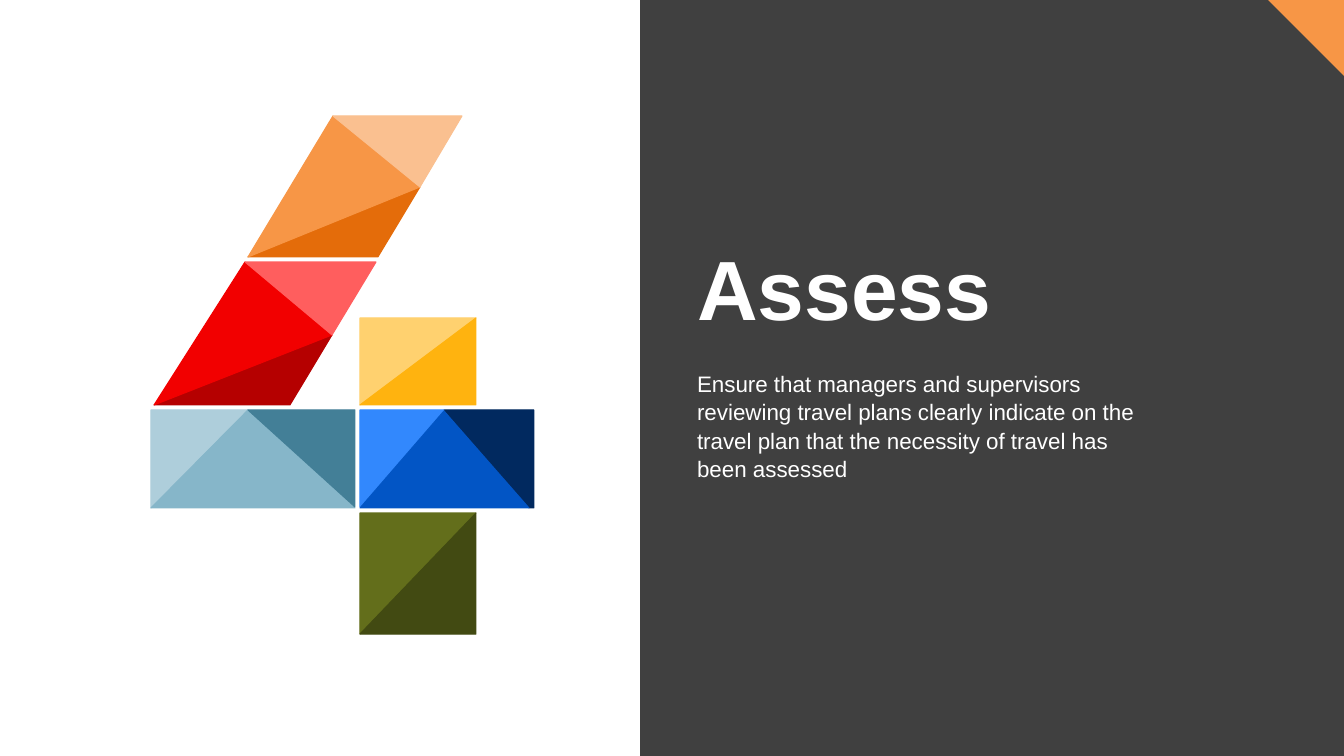
from pptx import Presentation
from pptx.dml.color import RGBColor
from pptx.enum.shapes import MSO_SHAPE
from pptx.enum.text import MSO_ANCHOR, MSO_AUTO_SIZE, PP_ALIGN
from pptx.util import Pt

RECTANGLE = MSO_SHAPE.RECTANGLE
TOP, BOTTOM = MSO_ANCHOR.TOP, MSO_ANCHOR.BOTTOM
FIXED_SIZE = MSO_AUTO_SIZE.NONE
LEFT = PP_ALIGN.LEFT

SLIDE_WIDTH, SLIDE_HEIGHT = 1344, 756
EMU_PER_PX = 12192000 / SLIDE_WIDTH
WHITE, DARK, ORANGE = "FFFFFF", "404040", "F79646"

NUMERAL_BLOCKS = [
    [
        ("E46C0A", [(248, 257), (378, 257), (420, 187)]),
        (ORANGE, [(333, 116), (248, 257), (420, 187)]),
        ("FAC090", [(462, 116), (333, 116), (420, 187)]),
    ],
    [
        ("B50000", [(154, 405), (290, 405), (332, 335)]),
        ("F20000", [(245, 262), (154, 405), (332, 335)]),
        ("FF5E5E", [(376, 262), (245, 262), (332, 335)]),
    ],
    [
        ("AECEDB", [(151, 410), (151, 508), (248, 410)]),
        ("86B6C9", [(248, 410), (151, 508), (355, 508)]),
        ("437F97", [(355, 410), (248, 410), (355, 507)]),
    ],
    [
        ("FFD16F", [(476, 318), (360, 318), (360, 405)]),
        ("FFB30F", [(476, 318), (360, 405), (476, 405)]),
    ],
    [
        ("01295F", [(529, 508), (534, 508), (534, 410), (444, 410)]),
        ("3288FD", [(444, 410), (360, 410), (360, 507)]),
        ("0255C5", [(529, 508), (444, 411), (360, 508)]),
    ],
    [
        ("636E1B", [(360, 513), (360, 634), (476, 513)]),
        ("424A12", [(360, 634), (476, 634), (476, 513)]),
    ],
]


def px(length):
    """Turn pixels into EMU."""
    return round(length * EMU_PER_PX)


def paint(fill, color):
    """Make a fill solid in a hex colour."""
    fill.solid()
    fill.fore_color.rgb = RGBColor.from_string(color)


def add_facet(shapes, color, corners, outlined=True):
    """Draw a closed polygon, optionally with an outline of its own colour."""
    builder = shapes.build_freeform(*corners[0], scale=EMU_PER_PX)
    builder.add_line_segments(corners[1:], close=True)
    facet = builder.convert_to_shape()
    facet.shadow.inherit = False
    paint(facet.fill, color)
    if outlined:
        paint(facet.line.fill, color)
        facet.line.width = Pt(0.75)
    else:
        facet.line.fill.background()


def add_panel(shapes, left, top, width, height, color):
    """Draw a plain rectangle."""
    panel = shapes.add_shape(RECTANGLE, px(left), px(top), px(width), px(height))
    panel.shadow.inherit = False
    paint(panel.fill, color)
    panel.line.fill.background()


def write(holder, box, wording, size, anchor, spacing, bold=False):
    """Place a placeholder and fill it with one white paragraph."""
    holder.left, holder.top, holder.width, holder.height = map(px, box)
    frame = holder.text_frame
    frame.text = wording
    frame.word_wrap = True
    frame.auto_size = FIXED_SIZE
    frame.vertical_anchor = anchor
    paragraph = frame.paragraphs[0]
    paragraph.alignment = LEFT
    paragraph.line_spacing = spacing
    paragraph.space_before = Pt(0)
    font = paragraph.runs[0].font
    font.name, font.size, font.bold = "Arial", Pt(size), bold
    paint(font.fill, WHITE)


def main():
    """Build the slide for step four and save it."""
    deck = Presentation()
    deck.slide_width, deck.slide_height = px(SLIDE_WIDTH), px(SLIDE_HEIGHT)
    slide = deck.slides.add_slide(deck.slide_layouts[0])
    paint(slide.background.fill, DARK)

    corner = [(1268, 0), (SLIDE_WIDTH, 0), (SLIDE_WIDTH, 76)]
    add_facet(slide.shapes, ORANGE, corner, outlined=False)
    add_panel(slide.shapes, 0, 0, 640, SLIDE_HEIGHT, WHITE)
    for block in NUMERAL_BLOCKS:
        block_shapes = slide.shapes.add_group_shape().shapes
        for color, corners in block:
            add_facet(block_shapes, color, corners)

    write(slide.shapes.title, (687, 122, 588, 220), "Assess", 60, BOTTOM, 0.8, bold=True)
    write(
        slide.placeholders[1],
        (687, 364, 484, 119),
        "Ensure that managers and supervisors reviewing travel plans clearly "
        "indicate on the travel plan that the necessity of travel has been assessed",
        16,
        TOP,
        1.05,
    )
    deck.save("out.pptx")


if __name__ == "__main__":
    main()
